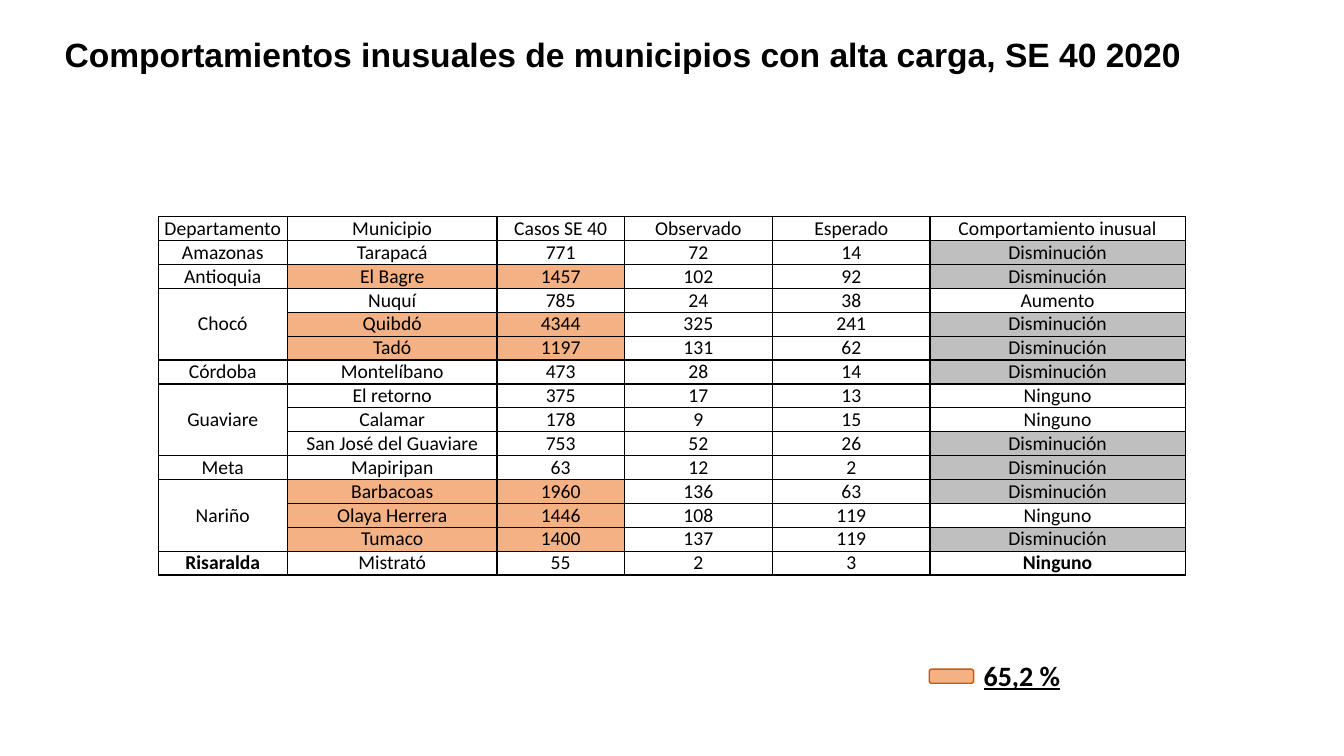
from lxml.etree import SubElement
from pptx import Presentation
from pptx.dml.color import RGBColor
from pptx.enum.shapes import MSO_SHAPE as Preset
from pptx.enum.text import MSO_ANCHOR as Anchor, MSO_AUTO_SIZE as AutoSize, PP_ALIGN as Align
from pptx.oxml.ns import qn
from pptx.util import Pt

BLACK, WHITE, ORANGE, GRAY, BROWN = "000000", "FFFFFF", "F4B183", "BFBFBF", "C55A11"
HIGH_LOAD = 1000
COLUMN_WIDTHS = (92.3, 149.8, 90.9, 105.9, 112.5, 182.3)
HEADINGS = ("Departamento", "Municipio", "Casos SE 40", "Observado", "Esperado",
            "Comportamiento inusual")
DEPARTMENTS = {
    "Amazonas": [("Tarapacá", 771, 72, 14, "Disminución")],
    "Antioquia": [("El Bagre", 1457, 102, 92, "Disminución")],
    "Chocó": [("Nuquí", 785, 24, 38, "Aumento"),
              ("Quibdó", 4344, 325, 241, "Disminución"),
              ("Tadó", 1197, 131, 62, "Disminución")],
    "Córdoba": [("Montelíbano", 473, 28, 14, "Disminución")],
    "Guaviare": [("El retorno", 375, 17, 13, "Ninguno"),
                 ("Calamar", 178, 9, 15, "Ninguno"),
                 ("San José del Guaviare", 753, 52, 26, "Disminución")],
    "Meta": [("Mapiripan", 63, 12, 2, "Disminución")],
    "Nariño": [("Barbacoas", 1960, 136, 63, "Disminución"),
               ("Olaya Herrera", 1446, 108, 119, "Ninguno"),
               ("Tumaco", 1400, 137, 119, "Disminución")],
    "Risaralda": [("Mistrató", 55, 2, 3, "Ninguno")],
}


def color(hex_code):
    """Return the colour for a hex string."""
    return RGBColor.from_string(hex_code)


def add_run(paragraph, text, size, font_name="Calibri", bold=False, underline=False):
    """Add one black run to a paragraph."""
    run = paragraph.add_run()
    run.text = str(text)
    font = run.font
    font.name, font.size, font.bold, font.underline = font_name, Pt(size), bold, underline
    font.color.rgb = color(BLACK)


def add_borders(cell):
    """Draw a thin black line on the four sides of a cell."""
    properties = cell._tc.get_or_add_tcPr()
    for side in ("lnL", "lnR", "lnT", "lnB"):
        border = SubElement(properties, qn(f"a:{side}"), w=str(Pt(1)))
        SubElement(SubElement(border, qn("a:solidFill")), qn("a:srgbClr"), val=BLACK)


def fill_cell(cell, text, fill=WHITE, bold=False, anchor=Anchor.BOTTOM):
    """Write centred text in a bordered, filled cell without margins."""
    cell.margin_left = cell.margin_right = cell.margin_top = cell.margin_bottom = 0
    cell.vertical_anchor = anchor
    add_borders(cell)
    cell.fill.solid()
    cell.fill.fore_color.rgb = color(fill)
    paragraph = cell.text_frame.paragraphs[0]
    paragraph.alignment = Align.CENTER
    paragraph.font.size = Pt(14)
    if text != "":
        add_run(paragraph, text, 14, bold=bold)


def place_title(slide, left, top, width, height):
    """Place the slide title in its placeholder."""
    title = slide.shapes.title
    title.left, title.top, title.width, title.height = map(Pt, (left, top, width, height))
    frame = title.text_frame
    frame.auto_size = AutoSize.NONE
    frame.vertical_anchor = Anchor.MIDDLE
    paragraph = frame.paragraphs[0]
    paragraph.alignment, paragraph.line_spacing = Align.LEFT, 0.9
    add_run(paragraph, "Comportamientos inusuales de municipios con alta carga, SE 40 2020",
            24, "Arial", bold=True)


def place_cases(slide, left, top, width, height):
    """Place the table of cases, grouped by department."""
    row_count = 1 + sum(map(len, DEPARTMENTS.values()))
    cases = slide.shapes.add_table(row_count, len(HEADINGS),
                                   *map(Pt, (left, top, width, height))).table
    cases.first_row = cases.horz_banding = False
    for column, column_width in zip(cases.columns, COLUMN_WIDTHS):
        column.width = Pt(column_width)
    for column, heading in enumerate(HEADINGS):
        fill_cell(cases.cell(0, column), heading, anchor=Anchor.MIDDLE)
    first = 1
    for department, towns in DEPARTMENTS.items():
        emphasis = department == "Risaralda"
        for row, town in enumerate(towns, first):
            fill_cell(cases.cell(row, 0), department if row == first else "", bold=emphasis,
                      anchor=Anchor.MIDDLE if len(towns) > 1 else Anchor.BOTTOM)
            load_fill = ORANGE if town[1] > HIGH_LOAD else WHITE
            trend_fill = GRAY if town[-1] == "Disminución" else WHITE
            fills = (load_fill, load_fill, WHITE, WHITE, trend_fill)
            for column, (value, fill) in enumerate(zip(town, fills), 1):
                fill_cell(cases.cell(row, column), value, fill,
                          bold=emphasis and column == len(town))
        if len(towns) > 1:
            cases.cell(first, 0).merge(cases.cell(first + len(towns) - 1, 0))
        first += len(towns)


def place_legend(slide, left, top, width, height):
    """Place the high-load swatch and its share."""
    swatch_width, swatch_height = 31.7, 10.1
    swatch = slide.shapes.add_shape(Preset.ROUNDED_RECTANGLE, Pt(left), Pt(top + 8.6),
                                    Pt(swatch_width), Pt(swatch_height))
    swatch.shadow.inherit = False
    swatch.fill.solid()
    swatch.fill.fore_color.rgb = color(ORANGE)
    swatch.line.color.rgb = color(BROWN)
    swatch.line.width = Pt(1)
    share = slide.shapes.add_textbox(Pt(left + swatch_width), Pt(top),
                                     Pt(width - swatch_width), Pt(height))
    share.text_frame.word_wrap = True
    paragraph = share.text_frame.paragraphs[0]
    paragraph.line_spacing = 0.9
    add_run(paragraph, "65,2 %", 20, bold=True, underline=True)


def main():
    """Build and save the slide."""
    deck = Presentation()
    deck.slide_width, deck.slide_height = Pt(960), Pt(540)
    slide = deck.slides.add_slide(deck.slide_layouts[5])
    place_title(slide, 38.9, 24.5, 848.9, 31.7)
    place_cases(slide, 113, 154.8, sum(COLUMN_WIDTHS), 252)
    place_legend(slide, 663.8, 469.4, 168.5, 33.1)
    deck.save("out.pptx")


if __name__ == "__main__":
    main()
